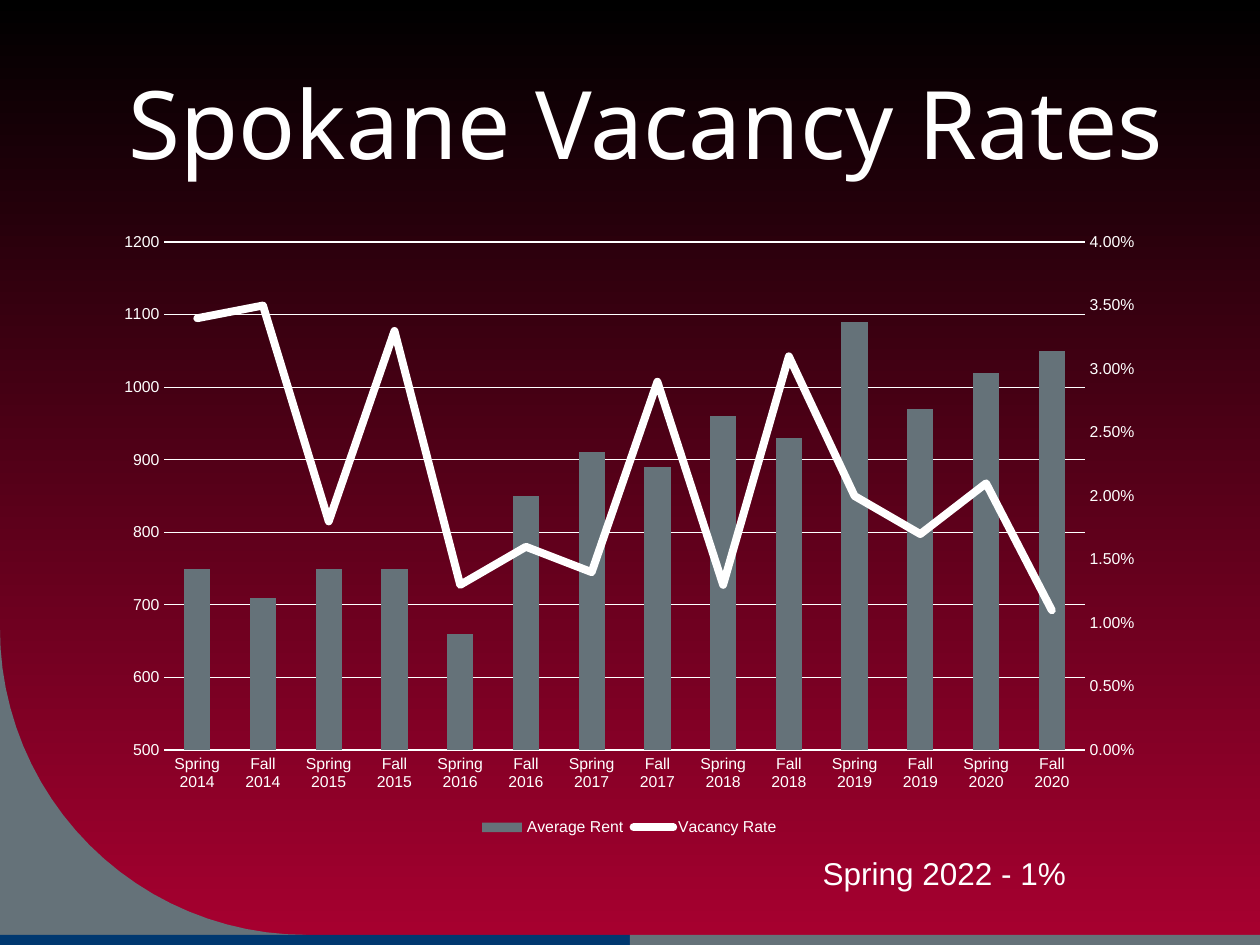
from copy import deepcopy
from math import cos, pi, sin

from pptx import Presentation
from pptx.chart.data import CategoryChartData
from pptx.dml.color import RGBColor
from pptx.enum.chart import XL_CHART_TYPE, XL_LEGEND_POSITION, XL_MARKER_STYLE, XL_TICK_MARK
from pptx.enum.shapes import MSO_SHAPE
from pptx.enum.text import MSO_ANCHOR, PP_ALIGN
from pptx.oxml import parse_xml
from pptx.oxml.ns import nsdecls
from pptx.util import Inches, Pt

WHITE, GRAY, NAVY, CRIMSON, BLACK = "FFFFFF", "657279", "003870", "A80030", "000000"
RENTS = [750, 710, 750, 750, 660, 850, 910, 890, 960, 930, 1090, 970, 1020, 1050]
VACANCIES = [0.034, 0.035, 0.018, 0.033, 0.013, 0.016, 0.014,
             0.029, 0.013, 0.031, 0.02, 0.017, 0.021, 0.011]


def rgb(color):
    return RGBColor.from_string(color)


def style_font(font, size, name="Arial"):
    font.size = Pt(size)
    font.name = name
    font.color.rgb = rgb(WHITE)


def style_line(line, width=0.75):
    line.color.rgb = rgb(WHITE)
    line.width = Pt(width)


def fill_flat(shape, color):
    shape.shadow.inherit = False
    shape.fill.solid()
    shape.fill.fore_color.rgb = rgb(color)
    shape.line.fill.background()


def paint_background(slide):
    fill = slide.background.fill
    fill.gradient()
    fill.gradient_angle = 270
    for stop, color in zip(fill.gradient_stops, (BLACK, CRIMSON)):
        stop.color.rgb = rgb(color)


def add_corner(slide, top=4.99, radius=2.43, steps=24):
    angles = [pi / 2 * step / steps for step in range(steps + 1)]
    arc = [(Inches(radius * (1 - cos(a))), Inches(top + radius * sin(a)))
           for a in reversed(angles)]
    builder = slide.shapes.build_freeform(Inches(0), Inches(top))
    builder.add_line_segments([(Inches(0), Inches(top + radius))] + arc, close=True)
    fill_flat(builder.convert_to_shape(), GRAY)


def add_band(slide, left, color):
    band = slide.shapes.add_shape(MSO_SHAPE.RECTANGLE, Inches(left), Inches(7.42),
                                  Inches(5), Inches(0.08))
    fill_flat(band, color)


def set_title(slide, text):
    title = slide.shapes.title
    title.left, title.top = Inches(0.71), Inches(0.57)
    title.width, title.height = Inches(8.83), Inches(1.31)
    frame = title.text_frame
    frame.text = text
    frame.word_wrap = True
    frame.vertical_anchor = MSO_ANCHOR.TOP
    heading = frame.paragraphs[0]
    heading.alignment = PP_ALIGN.CENTER
    heading.line_spacing = 0.9
    style_font(heading.runs[0].font, 54, "Noto Sans")


def add_note(slide, text):
    note = slide.shapes.add_textbox(Inches(6.43), Inches(6.73), Inches(2.75), Inches(0.4))
    note.text_frame.word_wrap = True
    note.text_frame.text = text
    style_font(note.text_frame.paragraphs[0].runs[0].font, 18)


def style_axis(axis):
    axis.major_tick_mark = axis.minor_tick_mark = XL_TICK_MARK.NONE
    style_font(axis.tick_labels.font, 9)


def copy_axis(axis_xml, axis_id, cross_id):
    copied = deepcopy(axis_xml)
    copied.find("{*}axId").set("val", axis_id)
    copied.find("{*}crossAx").set("val", cross_id)
    return copied


def remove_children(parent, tag):
    for child in parent.findall("{*}" + tag):
        parent.remove(child)


def move_to_right_axis(chart):
    bar_chart = chart.plots[0]._element
    plot_area = bar_chart.getparent()
    category_xml = plot_area.find("{*}catAx")
    value_xml = plot_area.find("{*}valAx")
    hidden_categories = copy_axis(category_xml, "3001", "3002")
    hidden_categories.find("{*}delete").set("val", "1")
    percent_axis = copy_axis(value_xml, "3002", "3001")
    remove_children(percent_axis, "majorGridlines")
    percent_axis.find("{*}axPos").set("val", "r")
    percent_axis.find("{*}crosses").set("val", "max")
    number_format = percent_axis.find("{*}numFmt")
    number_format.set("formatCode", "0.00%")
    number_format.set("sourceLinked", "0")
    value_xml.addnext(hidden_categories)
    hidden_categories.addnext(percent_axis)

    line_chart = parse_xml(
        f'<c:lineChart {nsdecls("c")}><c:grouping val="standard"/><c:varyColors val="0"/>'
        '<c:marker val="1"/><c:axId val="3001"/><c:axId val="3002"/></c:lineChart>')
    vacancy_xml = bar_chart.findall("{*}ser")[1]
    remove_children(vacancy_xml, "invertIfNegative")
    line_chart.insert(2, vacancy_xml)
    bar_chart.addnext(line_chart)


def add_rent_chart(slide):
    data = CategoryChartData(number_format="General")
    data.categories = [f"{season} {year}" for year in range(2014, 2021)
                       for season in ("Spring", "Fall")]
    data.add_series("Average Rent", RENTS)
    data.add_series("Vacancy Rate", VACANCIES, number_format="0.00%")
    chart = slide.shapes.add_chart(XL_CHART_TYPE.COLUMN_CLUSTERED, Inches(0.82), Inches(1.75),
                                   Inches(8.35), Inches(4.93), data).chart
    style_font(chart.font, 10)
    chart.has_title = False
    chart.has_legend = True
    chart.legend.position = XL_LEGEND_POSITION.BOTTOM
    chart.legend.include_in_layout = False
    style_font(chart.legend.font, 9)

    categories, rents = chart.category_axis, chart.value_axis
    style_axis(categories)
    style_line(categories.format.line)
    style_axis(rents)
    rents.tick_labels.number_format = "General"
    rents.tick_labels.number_format_is_linked = False
    rents.format.line.fill.background()
    move_to_right_axis(chart)
    rents.minimum_scale = 500
    style_line(rents.major_gridlines.format.line)

    columns, trend = chart.plots
    columns.gap_width = 150
    columns.vary_by_categories = False
    rent_fill = columns.series[0].format.fill
    rent_fill.solid()
    rent_fill.fore_color.rgb = rgb(GRAY)
    vacancy = trend.series[0]
    vacancy.smooth = False
    vacancy.marker.style = XL_MARKER_STYLE.NONE
    style_line(vacancy.format.line, 4.5)
    stroke = vacancy._element.find("{*}spPr/{*}ln")
    stroke.set("cap", "rnd")
    stroke.append(parse_xml(f'<a:round {nsdecls("a")}/>'))


def main():
    deck = Presentation()
    deck.slide_width, deck.slide_height = Inches(10), Inches(7.5)
    slide = deck.slides.add_slide(deck.slide_layouts[5])
    paint_background(slide)
    add_corner(slide)
    add_band(slide, 0, NAVY)
    add_band(slide, 5, GRAY)
    add_rent_chart(slide)
    set_title(slide, "Spokane Vacancy Rates")
    add_note(slide, "Spring 2022 - 1%")
    deck.save("out.pptx")


if __name__ == "__main__":
    main()
